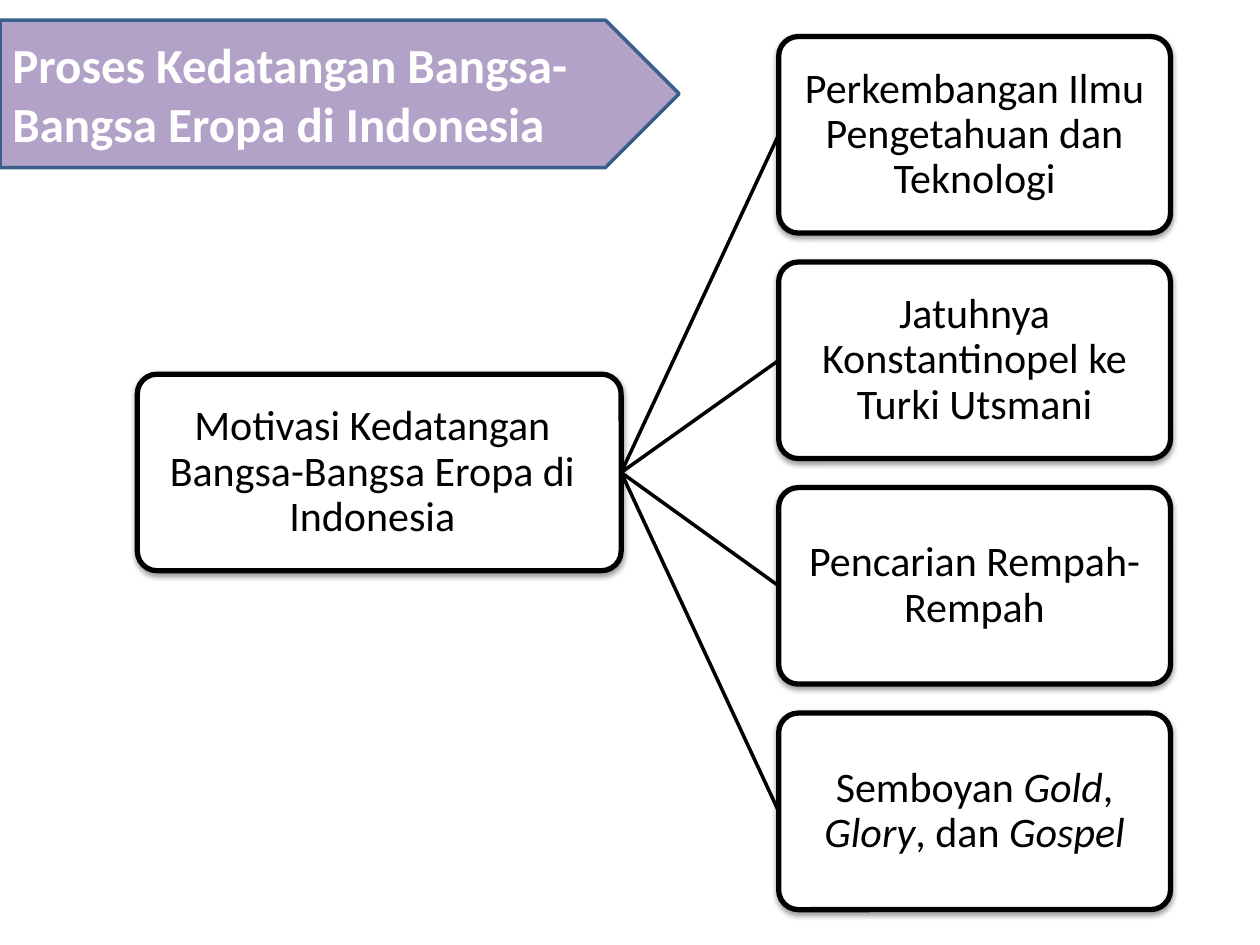
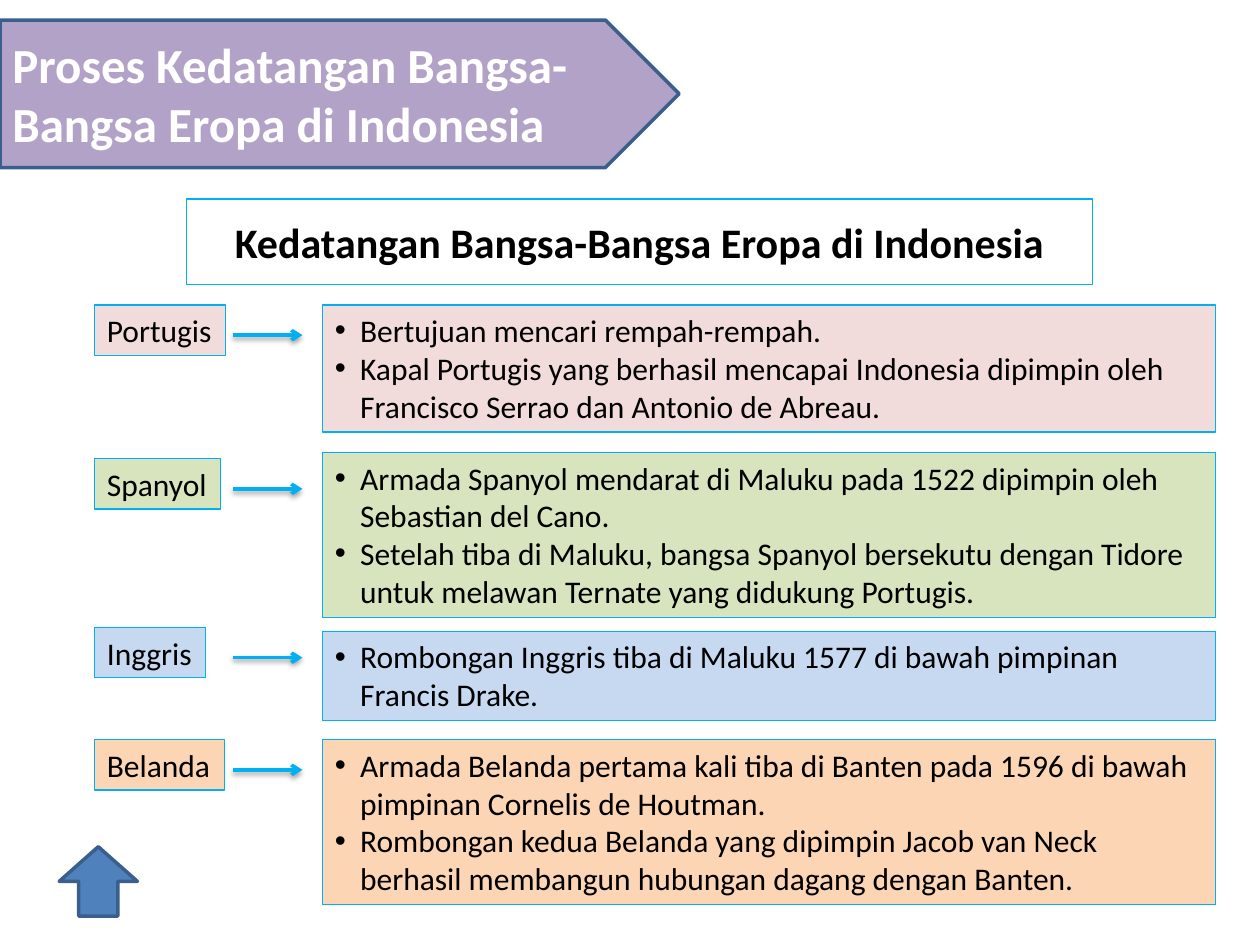
from dataclasses import dataclass

from lxml import etree
from pptx import Presentation
from pptx.dml.color import RGBColor
from pptx.enum.shapes import MSO_CONNECTOR, MSO_SHAPE
from pptx.enum.text import MSO_ANCHOR, MSO_AUTO_SIZE, PP_ALIGN
from pptx.oxml import parse_xml
from pptx.oxml.ns import nsdecls, qn
from pptx.shapes.autoshape import Shape
from pptx.shapes.connector import Connector
from pptx.slide import Slide
from pptx.util import Inches, Pt

RECTANGLE = MSO_SHAPE.RECTANGLE
ROUNDED = MSO_SHAPE.ROUNDED_RECTANGLE
PENTAGON = MSO_SHAPE.PENTAGON
UP_ARROW = MSO_SHAPE.UP_ARROW
STRAIGHT = MSO_CONNECTOR.STRAIGHT
LEFT, CENTER = PP_ALIGN.LEFT, PP_ALIGN.CENTER
TOP, MIDDLE = MSO_ANCHOR.TOP, MSO_ANCHOR.MIDDLE
GROW = MSO_AUTO_SIZE.SHAPE_TO_FIT_TEXT
LEFT_SIDE, RIGHT_SIDE = 1, 3


@dataclass(frozen=True)
class Theme:
    font: str = "Calibri"
    black: str = "000000"
    white: str = "FFFFFF"
    banner: str = "B3A2C7"
    outline: str = "3A5F8C"
    button: str = "4F81BD"
    accent: str = "00B0F0"
    banner_size: float = 28
    heading_size: float = 24
    body_size: float = 18


THEME = Theme()


@dataclass(frozen=True)
class Box:
    left: float
    top: float
    width: float
    height: float


@dataclass(frozen=True)
class Nation:
    name: str
    fill: str
    label: Box
    detail_top: float
    detail_height: float
    facts: list[str]


BANNER_TEXT = "Proses Kedatangan Bangsa-Bangsa Eropa di\u00a0Indonesia".replace("\u00a0", " ")
MOTIVATION = "Motivasi Kedatangan Bangsa-Bangsa Eropa di Indonesia"
MOTIVES = [
    "Perkembangan Ilmu Pengetahuan dan Teknologi",
    "Jatuhnya Konstantinopel ke Turki Utsmani",
    "Pencarian Rempah-Rempah",
    "Semboyan *Gold*, *Glory*, dan *Gospel*",
]
NATIONS = [
    Nation("Portugis", "F2DCDB", Box(0.75, 2.42, 1.04, 0.4), 2.42, 1.01, [
        "Bertujuan mencari rempah-rempah.",
        "Kapal Portugis yang berhasil mencapai Indonesia dipimpin oleh "
        "Francisco Serrao dan Antonio de Abreau.",
    ]),
    Nation("Spanyol", "D7E4BD", Box(0.75, 3.64, 1, 0.4), 3.59, 1.31, [
        "Armada Spanyol mendarat di Maluku pada 1522 dipimpin oleh "
        "Sebastian del Cano.",
        "Setelah tiba di Maluku, bangsa Spanyol bersekutu dengan Tidore "
        "untuk melawan Ternate yang didukung Portugis.",
    ]),
    Nation("Inggris", "C6D9F1", Box(0.75, 4.98, 0.88, 0.4), 5.01, 0.71, [
        "Rombongan Inggris tiba di Maluku 1577 di bawah pimpinan "
        "Francis Drake.",
    ]),
    Nation("Belanda", "FCD5B5", Box(0.75, 5.87, 1.03, 0.4), 5.87, 1.31, [
        "Armada Belanda pertama kali tiba di Banten pada 1596 di bawah "
        "pimpinan Cornelis de Houtman.",
        "Rombongan kedua Belanda yang dipimpin Jacob van Neck "
        "berhasil membangun hubungan dagang dengan Banten.",
    ]),
]


def add_box(slide: Slide, kind: MSO_SHAPE, box: Box, fill: str, line: str,
            line_width: float) -> Shape:
    shape = slide.shapes.add_shape(kind, Inches(box.left), Inches(box.top),
                                   Inches(box.width), Inches(box.height))
    shape.shadow.inherit = False
    shape.fill.solid()
    shape.fill.fore_color.rgb = RGBColor.from_string(fill)
    shape.line.color.rgb = RGBColor.from_string(line)
    shape.line.width = Pt(line_width)
    return shape


def write_text(shape: Shape, paragraphs: list[str], *, size: float,
               color: str = THEME.black, bold: bool = False,
               align: PP_ALIGN = LEFT, anchor: MSO_ANCHOR = TOP,
               line_spacing: float = 1.0, wrap: bool = True,
               grow: bool = False, bullets: bool = False) -> None:
    """Write one paragraph per string; text between asterisks is italic."""
    frame = shape.text_frame
    frame.word_wrap = wrap
    frame.vertical_anchor = anchor
    if grow:
        frame.auto_size = GROW
    for index, text in enumerate(paragraphs):
        paragraph = frame.add_paragraph() if index else frame.paragraphs[0]
        paragraph.alignment = align
        paragraph.line_spacing = line_spacing
        if bullets:
            add_bullet(paragraph)
        for position, part in enumerate(text.split("*")):
            if not part:
                continue
            run = paragraph.add_run()
            run.text = part
            run.font.name = THEME.font
            run.font.size = Pt(size)
            run.font.bold = bold
            run.font.italic = position % 2 == 1
            run.font.color.rgb = RGBColor.from_string(color)


def add_bullet(paragraph) -> None:
    properties = paragraph._p.get_or_add_pPr()
    properties.set("marL", str(Inches(0.2)))
    properties.set("indent", str(-Inches(0.2)))
    etree.SubElement(properties, qn("a:buFont"), typeface="Arial")
    etree.SubElement(properties, qn("a:buChar"), char="•")


def add_shadow(shape: Shape | Connector) -> None:
    """Give the shape a soft shadow just below it."""
    properties = shape._element.spPr
    for effects in properties.findall(qn("a:effectLst")):
        properties.remove(effects)
    properties.append(parse_xml(
        f'<a:effectLst {nsdecls("a")}>'
        f'<a:outerShdw blurRad="{Pt(3.1)}" dist="{Pt(1.6)}" dir="5400000" rotWithShape="0">'
        f'<a:srgbClr val="{THEME.black}"><a:alpha val="38000"/></a:srgbClr>'
        '</a:outerShdw></a:effectLst>'))


def add_line(slide: Slide, start: tuple[float, float],
             end: tuple[float, float], color: str) -> Connector:
    connector = slide.shapes.add_connector(
        STRAIGHT, *(Inches(value) for value in (*start, *end)))
    connector.line.color.rgb = RGBColor.from_string(color)
    connector.line.width = Pt(2)
    etree.SubElement(connector._element.spPr, qn("a:effectLst"))
    return connector


def add_arrow(slide: Slide, top: float) -> None:
    arrow = add_line(slide, (1.85, top), (2.4, top), THEME.accent)
    etree.SubElement(arrow.line._get_or_add_ln(), qn("a:tailEnd"), type="arrow")
    add_shadow(arrow)


def add_banner(slide: Slide) -> None:
    banner = add_box(slide, PENTAGON, Box(0, 0.16, 5.39, 1.17),
                     THEME.banner, THEME.outline, 2)
    write_text(banner, [BANNER_TEXT], size=THEME.banner_size,
               color=THEME.white, bold=True, anchor=MIDDLE)


def add_node(slide: Slide, box: Box, text: str, left_inset: float = 0.02,
             right_inset: float = 0.02) -> Shape:
    node = add_box(slide, ROUNDED, box, THEME.white, THEME.black, 3)
    node.adjustments[0] = 0.1
    add_shadow(node)
    frame = node.text_frame
    frame.margin_left, frame.margin_right = Inches(left_inset), Inches(right_inset)
    frame.margin_top = frame.margin_bottom = Inches(0.02)
    write_text(node, [text], size=THEME.heading_size, align=CENTER,
               anchor=MIDDLE, line_spacing=0.9)
    return node


def build_motivation_slide(slide: Slide) -> None:
    add_banner(slide)
    root_box = Box(1.09, 2.97, 3.84, 1.56)
    root = add_node(slide, root_box, MOTIVATION, left_inset=0, right_inset=0.11)
    root_end = (root_box.left + root_box.width,
                root_box.top + root_box.height / 2)
    for index, motive in enumerate(MOTIVES):
        box = Box(6.18, 0.29 + 1.79 * index, 3.11, 1.56)
        branch = add_line(slide, root_end,
                          (box.left, box.top + box.height / 2), THEME.black)
        node = add_node(slide, box, motive)
        branch.begin_connect(root, RIGHT_SIDE)
        branch.end_connect(node, LEFT_SIDE)


def build_arrival_slide(slide: Slide) -> None:
    add_banner(slide)
    heading = add_box(slide, RECTANGLE, Box(1.48, 1.58, 7.19, 0.68),
                      THEME.white, THEME.accent, 0.75)
    write_text(heading, ["Kedatangan Bangsa-Bangsa Eropa di Indonesia"],
               size=THEME.heading_size, bold=True, align=CENTER, anchor=MIDDLE)
    for nation in NATIONS:
        label = add_box(slide, RECTANGLE, nation.label, nation.fill,
                        THEME.accent, 0.75)
        write_text(label, [nation.name], size=THEME.body_size, wrap=False, grow=True)
        add_arrow(slide, nation.label.top + 0.24)
        detail_box = Box(2.56, nation.detail_top, 7.09, nation.detail_height)
        detail = add_box(slide, RECTANGLE, detail_box, nation.fill,
                         THEME.accent, 0.75)
        write_text(detail, nation.facts, size=THEME.body_size, grow=True, bullets=True)
    add_box(slide, UP_ARROW, Box(0.47, 6.72, 0.62, 0.55),
            THEME.button, THEME.outline, 2)


def main() -> None:
    presentation = Presentation()
    presentation.slide_width = Inches(10)
    presentation.slide_height = Inches(7.5)
    blank = presentation.slide_layouts[6]
    for build in (build_motivation_slide, build_arrival_slide):
        build(presentation.slides.add_slide(blank))
    presentation.save("out.pptx")


if __name__ == "__main__":
    main()
